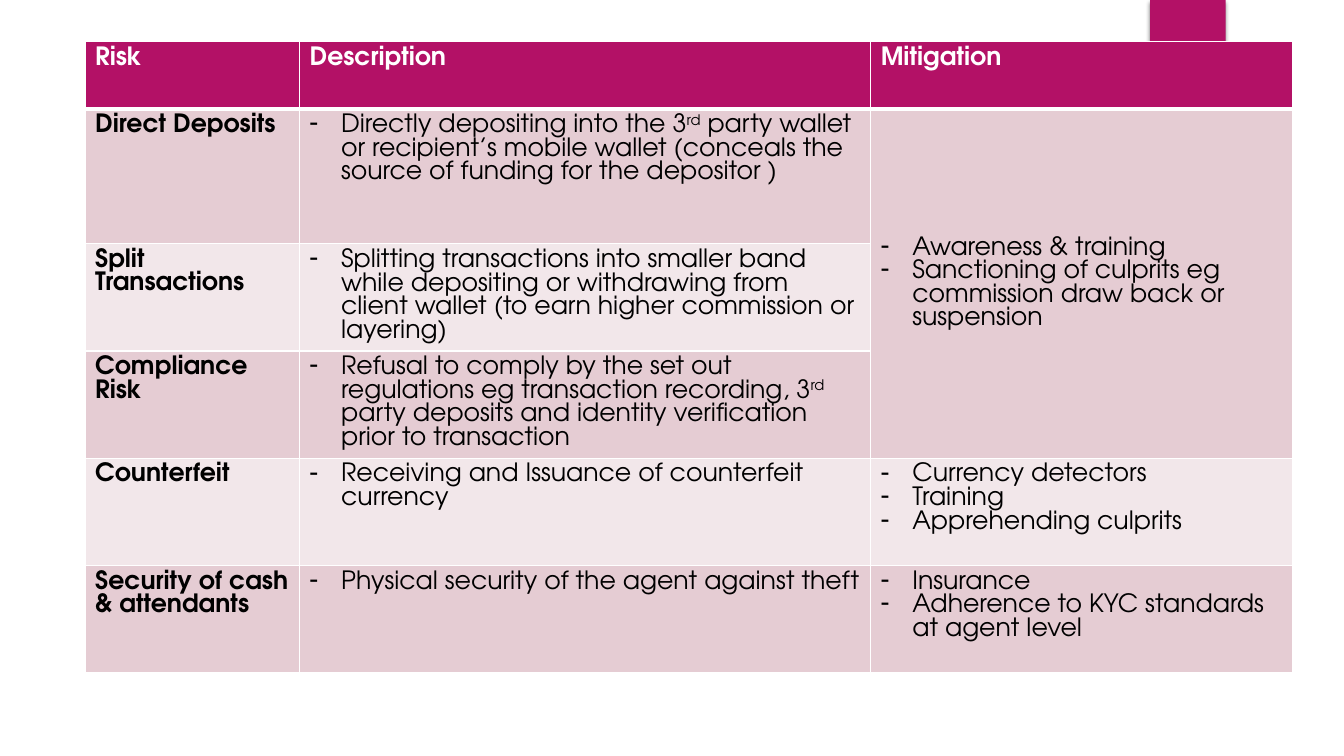
from lxml import etree
from pptx import Presentation
from pptx.dml.color import RGBColor
from pptx.enum.shapes import MSO_SHAPE
from pptx.enum.text import MSO_ANCHOR
from pptx.oxml.ns import qn
from pptx.util import Pt

RECT = MSO_SHAPE.RECTANGLE
MIDDLE = MSO_ANCHOR.MIDDLE

FONT = "TeX Gyre Adventor"
SIZE = 18
MAGENTA, WHITE, BLACK = "B31166", "FFFFFF", "000000"
BANDS = ["E5CCD3", "F2E7EA"]

# Text between carets is superscript.
HEADER = ["Risk", "Description", "Mitigation"]
RISKS = [
    ("Direct Deposits",
     ["Directly depositing into the 3^rd^ party wallet or recipient’s mobile wallet "
      "(conceals the source of funding for the depositor )"],
     ["Awareness & training",
      "Sanctioning of culprits eg commission draw back or suspension"]),
    ("Split Transactions",
     ["Splitting transactions into smaller band while depositing or withdrawing from "
      "client wallet (to earn higher commission or layering)"],
     []),
    ("Compliance Risk",
     ["Refusal to comply by the set out regulations eg transaction recording, 3^rd^ "
      "party deposits and identity verification prior to transaction"],
     []),
    ("Counterfeit",
     ["Receiving and Issuance of counterfeit currency"],
     ["Currency detectors", "Training", "Apprehending culprits"]),
    ("Security of cash & attendants",
     ["Physical security of the agent against theft"],
     ["Insurance", "Adherence to KYC standards at agent level"]),
]
SHARED_ROWS = (1, 3)  # first and last row of the shared mitigation

TABLE_LEFT, TABLE_TOP = 60.8, 29.8
COL_WIDTHS = [153.2, 408, 301.5]
ROW_HEIGHTS = [48.2, 96.2] + [76.6] * 4
INDENT = 22.5
TAB_BOX = (821.5, 0, 54, 90)


def rgb(value):
    return RGBColor.from_string(value)


def add_xml(parent, tag, **attrs):
    el = etree.SubElement(parent, qn(tag))
    for name, value in attrs.items():
        el.set(name, str(value))
    return el


def write(tf, lines, color=BLACK, bold=False, bullet=None):
    for i, line in enumerate(lines):
        p = tf.paragraphs[0] if i == 0 else tf.add_paragraph()
        if bullet:
            pPr = p._p.get_or_add_pPr()
            pPr.set("marL", str(Pt(INDENT)))
            pPr.set("indent", str(-Pt(INDENT)))
            add_xml(pPr, "a:buChar", char=bullet)
        for k, part in enumerate(line.split("^")):
            r = p.add_run()
            r.text = part
            r.font.name = FONT
            r.font.size = Pt(SIZE)
            r.font.bold = bold
            r.font.color.rgb = rgb(color)
            if k % 2:
                r._r.get_or_add_rPr().set("baseline", "30000")


def style_cell(cell, fill, top=1, bottom=1):
    """Fill a cell and give it white borders; top and bottom are line widths."""
    tcPr = cell._tc.get_or_add_tcPr()
    for side, width in (("L", 1), ("R", 1), ("T", top), ("B", bottom)):
        ln = add_xml(tcPr, "a:ln" + side, w=Pt(width))
        add_xml(add_xml(ln, "a:solidFill"), "a:srgbClr", val=WHITE)
    cell.fill.solid()
    cell.fill.fore_color.rgb = rgb(fill)


def add_corner_tab(slide):
    sp = slide.shapes.add_shape(RECT, *map(Pt, TAB_BOX))
    sp.fill.solid()
    sp.fill.fore_color.rgb = rgb(MAGENTA)
    sp.line.fill.background()
    sp.shadow.inherit = False
    effects = sp._element.spPr.find(qn("a:effectLst"))
    shadow = add_xml(effects, "a:outerShdw", blurRad=Pt(3), dist=Pt(2),
                     dir=90 * 60000, rotWithShape=0)
    add_xml(add_xml(shadow, "a:srgbClr", val=BLACK), "a:alpha", val=45000)


def add_risk_table(slide):
    frame = slide.shapes.add_table(
        len(ROW_HEIGHTS), len(COL_WIDTHS), Pt(TABLE_LEFT), Pt(TABLE_TOP),
        Pt(sum(COL_WIDTHS)), Pt(sum(ROW_HEIGHTS)))
    table = frame.table
    for col, width in zip(table.columns, COL_WIDTHS):
        col.width = Pt(width)
    for row, height in zip(table.rows, ROW_HEIGHTS):
        row.height = Pt(height)

    for c, title in enumerate(HEADER):
        cell = table.cell(0, c)
        style_cell(cell, MAGENTA, bottom=3)
        write(cell.text_frame, [title], color=WHITE, bold=True)

    for r, (risk, description, mitigation) in enumerate(RISKS, start=1):
        cells = [table.cell(r, c) for c in range(len(HEADER))]
        for cell in cells:
            style_cell(cell, BANDS[(r - 1) % 2], top=3 if r == 1 else 1)
        write(cells[0].text_frame, [risk], bold=True)
        write(cells[1].text_frame, description, bullet="-")
        write(cells[2].text_frame, mitigation, bullet="-")

    first, last = SHARED_ROWS
    shared = table.cell(first, 2)
    shared.merge(table.cell(last, 2))
    shared.vertical_anchor = MIDDLE


def main():
    prs = Presentation()
    prs.slide_width, prs.slide_height = Pt(960), Pt(540)
    slide = prs.slides.add_slide(prs.slide_layouts[6])
    add_corner_tab(slide)
    add_risk_table(slide)
    prs.save("out.pptx")


if __name__ == "__main__":
    main()
